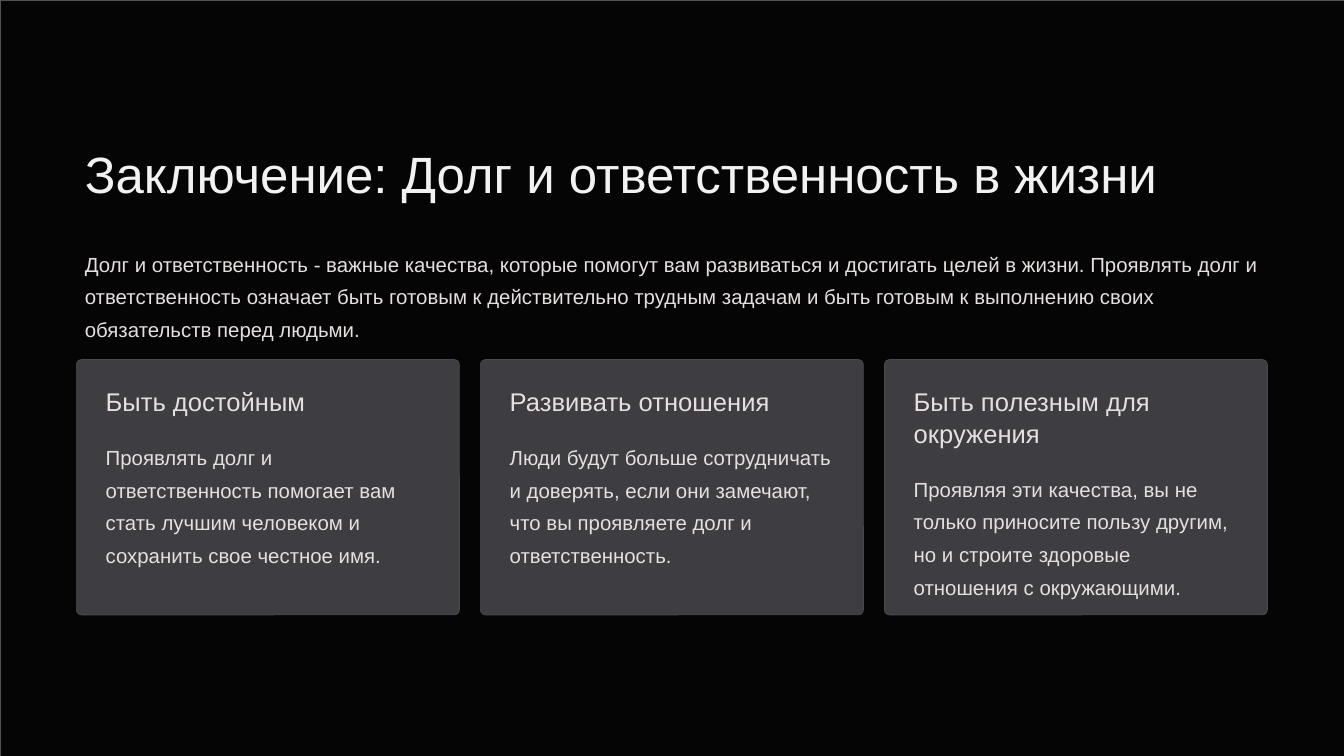
from pptx import Presentation
from pptx.dml.color import RGBColor
from pptx.enum.shapes import MSO_SHAPE
from pptx.enum.text import MSO_ANCHOR, MSO_AUTO_SIZE, PP_ALIGN
from pptx.oxml.ns import qn
from pptx.util import Pt

BACKDROP = RGBColor(0x05, 0x05, 0x05)
BACKDROP_LINE = RGBColor(0x56, 0x51, 0x51)
CARD = RGBColor(0x3D, 0x3D, 0x42)
CARD_LINE = RGBColor(0x49, 0x49, 0x50)
TITLE = RGBColor(0xF2, 0xF2, 0xF3)
TEXT = RGBColor(0xE5, 0xE0, 0xDF)

FONT = "Arial"
WIDTH, HEIGHT = 1152, 648
MARGIN = 65.5
CARD_WIDTH, CARD_HEIGHT, CARD_GAP = 328.3, 218.9, 18
CARD_PADDING = 18
HEADING_LINE = 27.3

HEADLINE = "Заключение: Долг и ответственность в жизни"
INTRODUCTION = (
    "Долг и ответственность - важные качества, которые помогут вам развиваться "
    "и достигать целей в жизни. Проявлять долг и ответственность означает быть "
    "готовым к действительно трудным задачам и быть готовым к выполнению своих "
    "обязательств перед людьми."
)
CARDS = [
    ("Быть достойным", 175, 1,
     "Проявлять долг и ответственность помогает вам стать лучшим человеком "
     "и сохранить свое честное имя."),
    ("Развивать отношения", 226, 1,
     "Люди будут больше сотрудничать и доверять, если они замечают, "
     "что вы проявляете долг и ответственность."),
    ("Быть полезным для окружения", 292.3, 2,
     "Проявляя эти качества, вы не только приносите пользу другим, "
     "но и строите здоровые отношения с окружающими."),
]


def place(shape, left, top, width, height):
    """Move a shape to a box given in points."""
    shape.left, shape.top = Pt(left), Pt(top)
    shape.width, shape.height = Pt(width), Pt(height)


def write(shape, text, size, line, color=TEXT, wrap=True):
    """Write one left-aligned paragraph at the top of a shape."""
    frame = shape.text_frame
    frame.auto_size = MSO_AUTO_SIZE.NONE
    frame.word_wrap = wrap
    frame.vertical_anchor = MSO_ANCHOR.TOP
    paragraph = frame.paragraphs[0]
    paragraph.alignment = PP_ALIGN.LEFT
    paragraph.line_spacing = Pt(line)
    paragraph.space_before = Pt(0)
    run = paragraph.add_run()
    run.text = text
    run.font.name = FONT
    run.font.size = Pt(size)
    run.font.color.rgb = color


def add_panel(slide, kind, box, fill, line):
    """Add a filled panel with a thin outline."""
    panel = slide.shapes.add_shape(kind, *map(Pt, box))
    panel.shadow.inherit = False
    panel.fill.solid()
    panel.fill.fore_color.rgb = fill
    panel.line.color.rgb = line
    panel.line.width = Pt(0.6)
    return panel


def add_backdrop(slide):
    """Lay the dark panel behind everything on the slide."""
    panel = add_panel(slide, MSO_SHAPE.RECTANGLE, (0, 0, WIDTH, HEIGHT),
                      BACKDROP, BACKDROP_LINE)
    slide.shapes._spTree.insert(2, panel._element)


def fill_header(slide, left, top):
    """Fill the title and the introduction below it."""
    title, body = slide.placeholders
    place(title, left, top, 948.2, 54)
    write(title, HEADLINE, 43.7, 54.7, TITLE, wrap=False)
    place(body, left, top + 88.6, WIDTH - 2 * MARGIN, 83.5)
    write(body, INTRODUCTION, 17.5, 28)
    properties = body.text_frame.paragraphs[0]._p.get_or_add_pPr()
    properties.set("marL", "0")
    properties.set("indent", "0")
    properties.append(properties.makeelement(qn("a:buNone"), {}))


def add_card(slide, left, top, heading, heading_width, heading_lines, text):
    """Add a rounded card with a heading and a text."""
    card = add_panel(slide, MSO_SHAPE.ROUNDED_RECTANGLE,
                     (left, top, CARD_WIDTH, CARD_HEIGHT), CARD, CARD_LINE)
    card.adjustments[0] = 0.02
    left, top = left + CARD_PADDING, top + CARD_PADDING
    heading_height = heading_lines * HEADING_LINE
    heading_box = slide.shapes.add_textbox(
        Pt(left), Pt(top), Pt(heading_width), Pt(heading_height))
    write(heading_box, heading, 21.9, HEADING_LINE, wrap=heading_lines > 1)
    text_box = slide.shapes.add_textbox(
        Pt(left), Pt(top + heading_height + 17.4),
        Pt(CARD_WIDTH - 2 * CARD_PADDING), Pt(111))
    write(text_box, text, 17.5, 28)


def add_cards(slide, left, top):
    """Add the row of cards at equal gaps."""
    for index, card in enumerate(CARDS):
        add_card(slide, left + index * (CARD_WIDTH + CARD_GAP), top, *card)


def main():
    """Build and save the slide."""
    presentation = Presentation()
    presentation.slide_width, presentation.slide_height = Pt(WIDTH), Pt(HEIGHT)
    slide = presentation.slides.add_slide(presentation.slide_layouts[1])
    add_backdrop(slide)
    fill_header(slide, MARGIN, 116.6)
    add_cards(slide, MARGIN, 308.2)
    presentation.save("out.pptx")


if __name__ == "__main__":
    main()
